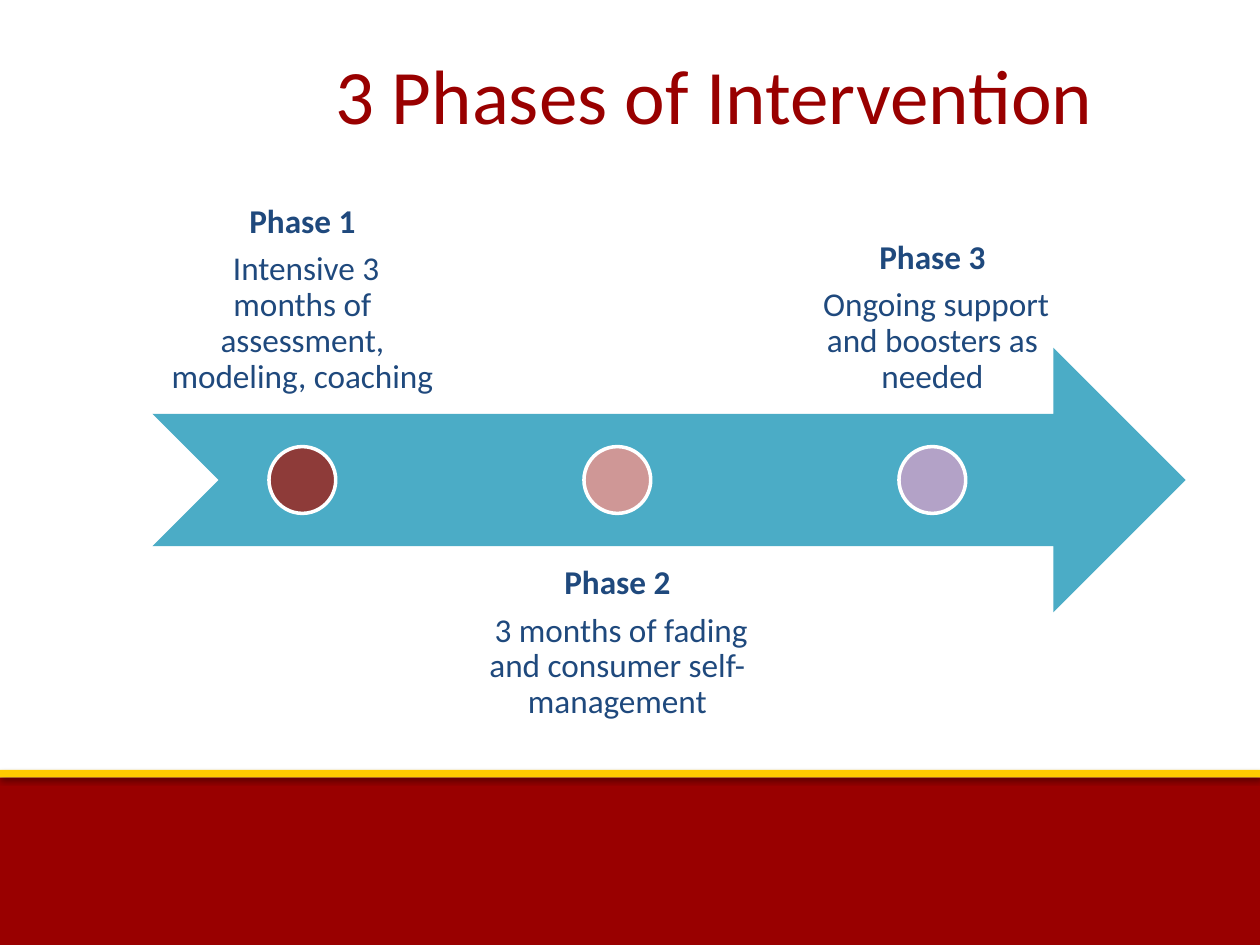
from dataclasses import dataclass

from lxml.etree import SubElement
from pptx import Presentation
from pptx.dml.color import RGBColor
from pptx.enum.shapes import MSO_SHAPE as Shape
from pptx.enum.text import MSO_ANCHOR as Anchor, PP_ALIGN as Align
from pptx.oxml.ns import qn
from pptx.util import Inches, Pt


@dataclass(frozen=True)
class Theme:
    font: str = "Calibri"
    title_size: int = 44
    body_size: int = 19
    red: str = "990000"
    gold: str = "FFCC00"
    teal: str = "4BACC6"
    navy: str = "1F497D"
    white: str = "FFFFFF"


THEME = Theme()
TITLE = "3 Phases of Intervention"
# heading, description, marker colour
PHASES = [
    ("Phase 1", " Intensive 3 months of assessment, modeling, coaching", "8E3B39"),
    ("Phase 2", " 3 months of fading and consumer self-management", "CF9796"),
    ("Phase 3", " Ongoing support and boosters as needed", "B3A2C7"),
]
# top, height, colour, shadow opacity in percent, shadow distance in points
FOOTER_BARS = [
    (6.17, 1.33, THEME.red, 35, 1.8),
    (6.11, 0.06, THEME.gold, 38, 1.6),
]
ARROW_LEFT, ARROW_TOP, ARROW_W, ARROW_H = 1.21, 2.76, 8.2, 2.1
LABEL_W, LABEL_H, LABEL_STEP = 2.38, 2.1, 2.5
LABEL_TOP_ABOVE, LABEL_TOP_BELOW = 1.19, 4.34
DOT = 0.53


def add_filled(shapes, kind, box, fill, line=None):
    s = shapes.add_shape(kind, *map(Inches, box))
    s.shadow.inherit = False
    s.fill.solid()
    s.fill.fore_color.rgb = RGBColor.from_string(fill)
    if line:
        s.line.color.rgb = RGBColor.from_string(line)
        s.line.width = Pt(2)
    else:
        s.line.fill.background()
    return s


def add_drop_shadow(s, opacity, distance, blur=3.1):
    effects = s._element.spPr.find(qn("a:effectLst"))
    shadow = SubElement(effects, qn("a:outerShdw"), blurRad=str(Pt(blur)),
                        dist=str(Pt(distance)), dir="5400000", rotWithShape="0")
    color = SubElement(shadow, qn("a:srgbClr"), val="000000")
    SubElement(color, qn("a:alpha"), val=str(opacity * 1000))


def write(p, text, *, size, color, bold=False, spacing=None, after=None):
    p.alignment = Align.CENTER
    p.line_spacing = spacing
    if after is not None:
        p.space_after = Pt(after)
    r = p.add_run()
    r.text = text
    r.font.name = THEME.font
    r.font.size = Pt(size)
    r.font.bold = bold
    r.font.color.rgb = RGBColor.from_string(color)


def add_label(shapes, left, top, anchor, heading, description):
    box = shapes.add_textbox(*map(Inches, (left, top, LABEL_W, LABEL_H)))
    tf = box.text_frame
    tf.word_wrap = True
    tf.vertical_anchor = anchor
    tf.margin_left = tf.margin_right = tf.margin_top = tf.margin_bottom = Inches(0.15)
    style = dict(size=THEME.body_size, color=THEME.navy, spacing=0.9)
    write(tf.paragraphs[0], heading, bold=True, after=0.35 * THEME.body_size, **style)
    write(tf.add_paragraph(), description, **style)


def main():
    prs = Presentation()
    prs.slide_width, prs.slide_height = Inches(10), Inches(7.5)
    slide = prs.slides.add_slide(prs.slide_layouts[5])
    shapes = slide.shapes

    for top, height, color, opacity, distance in FOOTER_BARS:
        bar = add_filled(shapes, Shape.RECTANGLE, (0, top, 10, height), color)
        add_drop_shadow(bar, opacity, distance)

    title = shapes.title
    title.left, title.top, title.width, title.height = map(Inches, (1.57, 0.3, 8.2, 1.25))
    tf = title.text_frame
    tf.vertical_anchor = Anchor.TOP
    tf.margin_top = Inches(0.08)
    write(tf.paragraphs[0], TITLE, size=THEME.title_size, color=THEME.red)

    add_filled(shapes, Shape.NOTCHED_RIGHT_ARROW,
               (ARROW_LEFT, ARROW_TOP, ARROW_W, ARROW_H), THEME.teal)
    dot_top = ARROW_TOP + (ARROW_H - DOT) / 2
    for i, (heading, description, color) in enumerate(PHASES):
        left = ARROW_LEFT + i * LABEL_STEP
        below = i % 2 == 1
        add_label(shapes, left, LABEL_TOP_BELOW if below else LABEL_TOP_ABOVE,
                  Anchor.TOP if below else Anchor.BOTTOM, heading, description)
        add_filled(shapes, Shape.OVAL, (left + (LABEL_W - DOT) / 2, dot_top, DOT, DOT),
                   color, line=THEME.white)

    prs.save("out.pptx")


if __name__ == "__main__":
    main()
